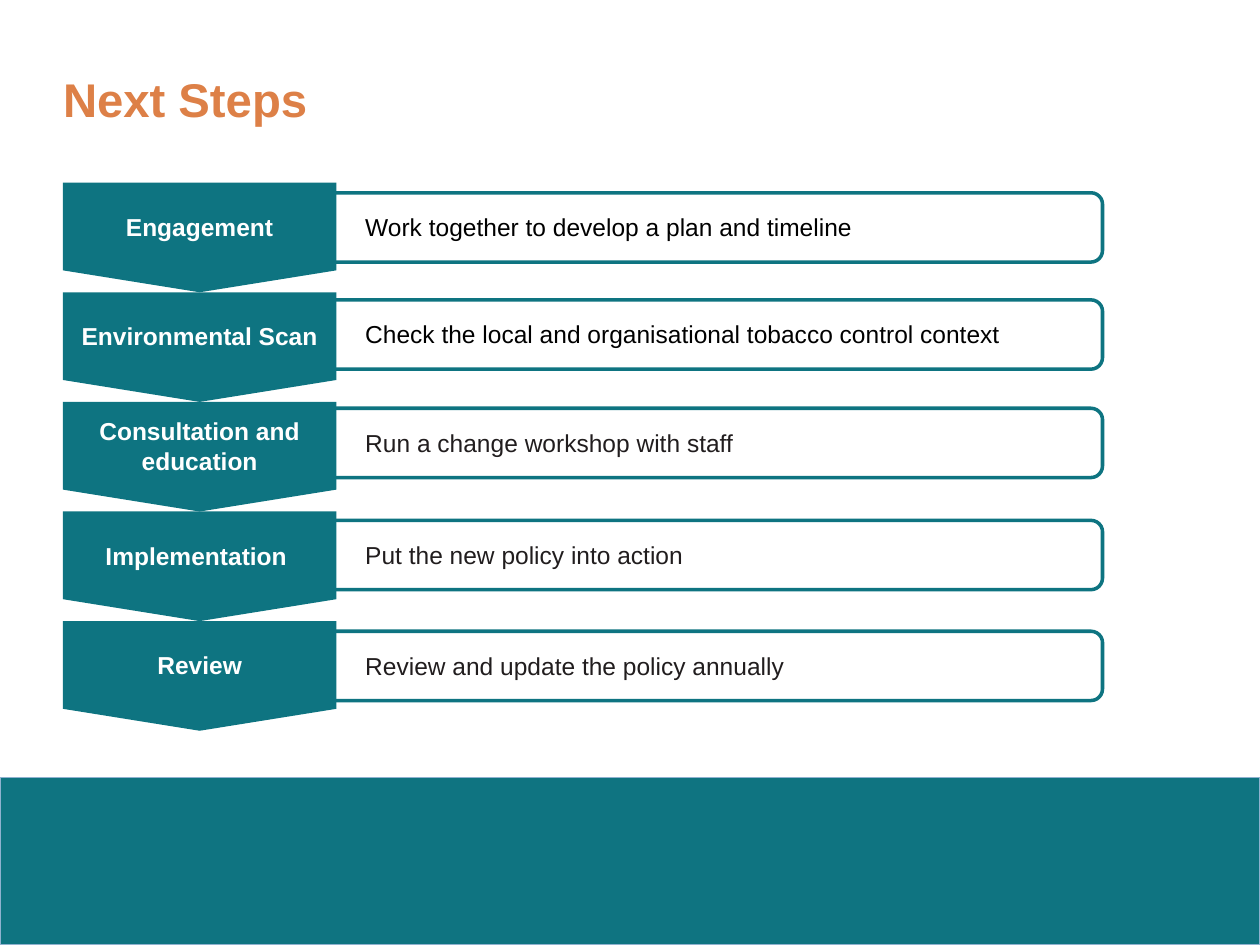
"""Build the "Next Steps" slide: five chevron stages, each with its action."""
from dataclasses import dataclass

from pptx import Presentation
from pptx import util as u
from pptx.dml.color import RGBColor
from pptx.enum import shapes, text

TITLE = "Next Steps"
STEPS = [
    ("Engagement", "Work together to develop a plan and timeline", 1.53, "000000"),
    ("Environmental Scan", "Check the local and organisational tobacco control context", 2.38, "000000"),
    ("Consultation and education", "Run a change workshop with staff", 3.24, "211D1E"),
    ("Implementation ", "Put the new policy into action", 4.13, "211D1E"),
    ("Review", "Review and update the policy annually", 5.01, "211D1E"),
]


@dataclass(frozen=True)
class Theme:
    font: str = "Arial"
    title_size: float = 27
    body_size: float = 14
    title: str = "DD8047"
    teal: str = "0E7481"
    band: str = "0F7481"
    band_line: str = "8FB2CF"
    white: str = "FFFFFF"


THEME = Theme()
STAGE_LEFT, STAGE_TOP, STAGE_WIDTH, STAGE_HEIGHT = 0.5, 1.45, 2.17, 0.87
FRAME_LEFT, FRAME_WIDTH, FRAME_HEIGHT = 2.32, 6.43, 0.55
ACTION_LEFT, ACTION_WIDTH, ACTION_HEIGHT = 2.8, 5.95, 0.34


def inches(*lengths):
    return [u.Inches(length) for length in lengths]


def write(frame, words, size, color, bold=False, align=text.PP_ALIGN.LEFT):
    frame.word_wrap = True
    para = frame.paragraphs[0]
    para.text = words
    para.alignment = align
    para.font.name = THEME.font
    para.font.size = u.Pt(size)
    para.font.bold = bold
    para.font.color.rgb = RGBColor.from_string(color)


def add_box(page, kind, place, fill=None, line=None, weight=2):
    box = page.shapes.add_shape(kind, *inches(*place))
    box.shadow.inherit = False
    for paint, color in ((box.fill, fill), (box.line.fill, line)):
        if color:
            paint.solid()
            paint.fore_color.rgb = RGBColor.from_string(color)
        else:
            paint.background()
    if line:
        box.line.width = u.Pt(weight)
    return box


def add_title(page):
    title = page.shapes.title
    title.left, title.top, title.width, title.height = inches(0.5, 0.56, 8.25, 0.45)
    frame = title.text_frame
    frame.margin_left = frame.margin_top = frame.margin_right = frame.margin_bottom = 0
    frame.auto_size = text.MSO_AUTO_SIZE.SHAPE_TO_FIT_TEXT
    write(frame, TITLE, THEME.title_size, THEME.title, bold=True)


def add_action(page, words, top, color):
    left = FRAME_LEFT + (FRAME_WIDTH - FRAME_HEIGHT) / 2
    turned_top = top - (FRAME_WIDTH - FRAME_HEIGHT) / 2
    outline = add_box(page, shapes.MSO_SHAPE.ROUND_2_SAME_RECTANGLE,
                      (left, turned_top, FRAME_HEIGHT, FRAME_WIDTH), line=THEME.teal)
    outline.rotation = 90
    label_top = top + (FRAME_HEIGHT - ACTION_HEIGHT) / 2
    label = page.shapes.add_textbox(*inches(ACTION_LEFT, label_top, ACTION_WIDTH, ACTION_HEIGHT))
    write(label.text_frame, words, THEME.body_size, color)
    label.text_frame.auto_size = text.MSO_AUTO_SIZE.SHAPE_TO_FIT_TEXT


def add_stage(page, index, words):
    place = (STAGE_LEFT, STAGE_TOP + index * STAGE_HEIGHT, STAGE_WIDTH, STAGE_HEIGHT)
    stage = add_box(page, shapes.MSO_SHAPE.FLOWCHART_OFFPAGE_CONNECTOR, place, fill=THEME.teal)
    stage.text_frame.vertical_anchor = text.MSO_ANCHOR.MIDDLE
    write(stage.text_frame, words, THEME.body_size, THEME.white, bold=True,
          align=text.PP_ALIGN.CENTER)


def main():
    deck = Presentation()
    deck.slide_width, deck.slide_height = inches(10, 7.5)
    page = deck.slides.add_slide(deck.slide_layouts[5])
    add_box(page, shapes.MSO_SHAPE.RECTANGLE, (0, 6.17, 10, 1.33),
            fill=THEME.band, line=THEME.band_line, weight=0.75)
    add_title(page)
    for _, action, top, color in STEPS:
        add_action(page, action, top, color)
    for index, (stage, *_) in enumerate(STEPS):
        add_stage(page, index, stage)
    deck.save("out.pptx")


if __name__ == "__main__":
    main()
